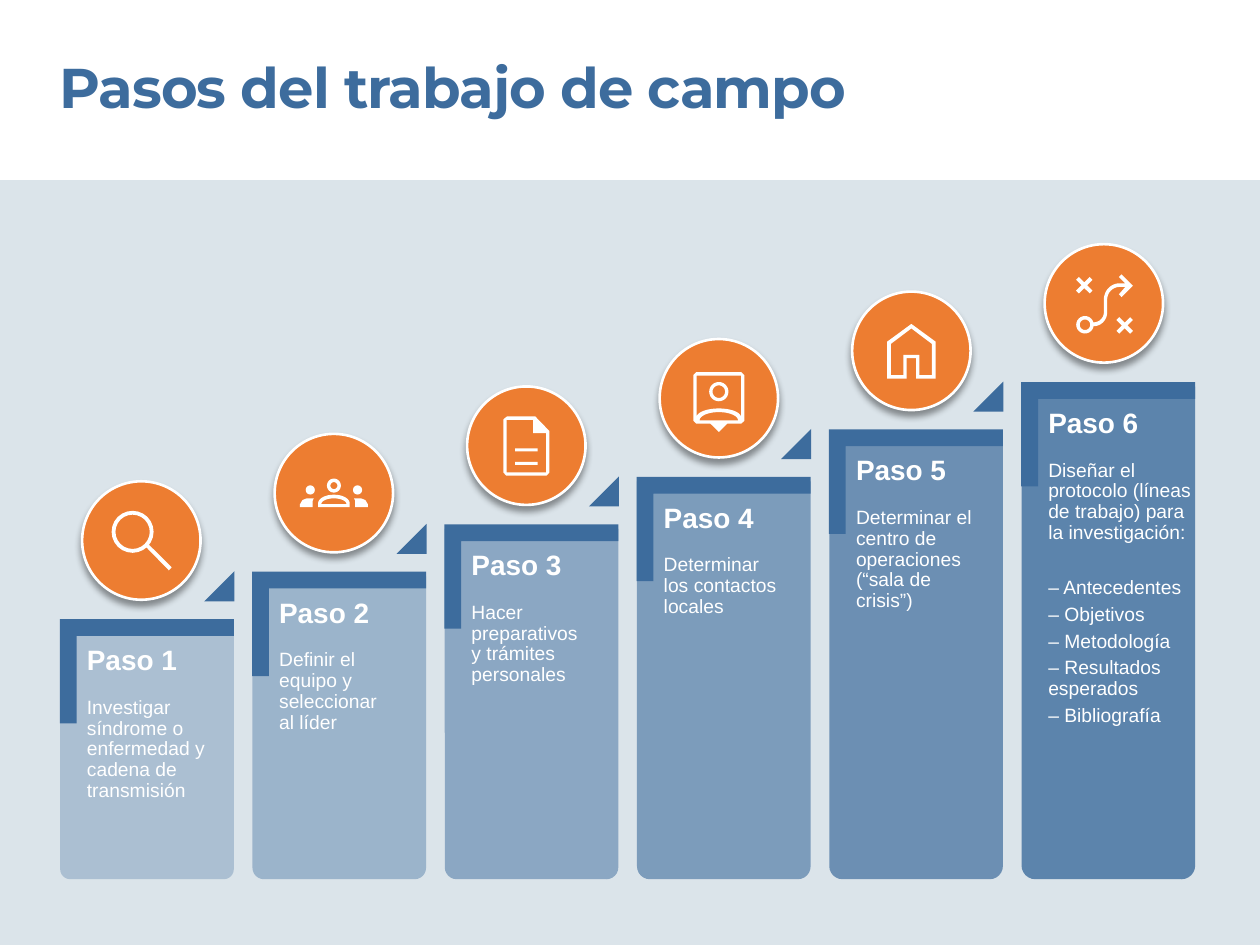
"""Build the slide with the six rising steps of field work."""
import math

from lxml import etree
from pptx import Presentation
from pptx import util as u
from pptx.dml.color import RGBColor
from pptx.enum import shapes, text
from pptx.oxml.ns import qn

COLORS = {"blue": "3D6C9D", "panel": "DBE4EA", "orange": "ED7D31", "white": "FFFFFF", "shadow": "000000"}
PITCH, RISE = 109.87, 27.1
BAR_BOTTOM = 502.4
CIRCLE = 67.7

STEPS = [
    ("Investigar síndrome o enfermedad y cadena de transmisión", 90, 0.058, 30),
    ("Definir el equipo y seleccionar al líder", 75, 0.066, 40),
    ("Hacer preparativos y trámites personales", 75.6, 0.069, 50),
    ("Determinar los contactos locales", 75.6, 0.074, 60),
    ("Determinar el centro de operaciones (“sala de crisis”)", 78.5, 0.076, 70),
    ("Diseñar el protocolo (líneas de trabajo) para la investigación:", 90, 0.079, 80),
]
PROTOCOL = ["Antecedentes", "Objetivos", "Metodología", "Resultados esperados", "Bibliografía"]


def add_element(parent, tag, **attributes):
    return etree.SubElement(parent, qn(tag), attributes)


def paint(shape, color, alpha=None):
    shape.shadow.inherit = False
    shape.fill.solid()
    shape.fill.fore_color.rgb = RGBColor.from_string(COLORS[color])
    shape.line.fill.background()
    if alpha is not None:
        tint = shape.fill._xPr.find(".//" + qn("a:srgbClr"))
        add_element(tint, "a:alpha", val=str(alpha * 1000))


def add_block(slide, kind, box, color, adjustments=(), rotation=0, alpha=None):
    block = slide.shapes.add_shape(kind, *map(u.Pt, box))
    for index, value in enumerate(adjustments):
        block.adjustments[index] = value
    block.rotation = rotation
    paint(block, color, alpha)
    return block


def add_text_frame(slide, box, insets):
    frame = slide.shapes.add_textbox(*map(u.Pt, box)).text_frame
    frame.word_wrap = True
    frame.margin_left, frame.margin_top, frame.margin_right, frame.margin_bottom = map(u.Pt, insets)
    return frame


def write(paragraph, wording, size, color="white", font="Arial", bold=False):
    paragraph.text = wording
    paragraph.font.name = font
    paragraph.font.size = u.Pt(size)
    paragraph.font.bold = bold
    paragraph.font.color.rgb = RGBColor.from_string(COLORS[color])


def add_title(slide):
    frame = add_text_frame(slide, (33.8, 30.2, 615.6, 38.9), (0, 0, 0, 0))
    frame.auto_size = text.MSO_AUTO_SIZE.SHAPE_TO_FIT_TEXT
    title = frame.paragraphs[0]
    write(title, "Pasos del trabajo de campo", 32, "blue", "Montserrat", True)
    title.runs[0].font._element.set("spc", "-50")


def add_step_text(slide, index, wording, width):
    items = PROTOCOL if index == len(STEPS) - 1 else []
    box = (43.9 + PITCH * index, 363.6 - RISE * index, width, 78.5)
    frame = add_text_frame(slide, box, (5.76, 5.76, 0 if items else 2.88, 5.76))
    heading = frame.paragraphs[0]
    write(heading, f"Paso {index + 1}", 16, bold=True)
    for line in [wording] + [f"– {item}" for item in items]:
        paragraph = frame.add_paragraph()
        write(paragraph, line, 11)
        paragraph.space_after = u.Pt(3.5)
    heading.space_after = u.Pt(12)
    for paragraph in frame.paragraphs:
        paragraph.line_spacing = 0.9
    if items:
        frame.paragraphs[2].space_before = u.Pt(16)


def add_circle(slide, center):
    box = [value - CIRCLE / 2 for value in center] + [CIRCLE, CIRCLE]
    circle = add_block(slide, shapes.MSO_SHAPE.OVAL, box, "orange")
    circle.line.color.rgb = RGBColor.from_string(COLORS["white"])
    circle.line.width = u.Pt(1.5)
    effects = circle._element.spPr.find(qn("a:effectLst"))
    shadow = add_element(effects, "a:outerShdw", blurRad=str(u.Pt(4)), dist=str(u.Pt(3)),
                         dir="5400000", algn="t", rotWithShape="0")
    shade = add_element(shadow, "a:srgbClr", val=COLORS["shadow"])
    add_element(shade, "a:alpha", val="40000")


def arc(x, y, rx, ry, start=0, end=360, parts=24):
    angles = [math.radians(start + (end - start) * n / parts) for n in range(parts + 1)]
    return [(x + rx * math.cos(a), y + ry * math.sin(a)) for a in angles]


def disc(x, y, radius):
    return arc(x, y, radius, radius)


def rectangle(left, top, right, bottom):
    return [(left, top), (right, top), (right, bottom), (left, bottom)]


def mirror(points):
    return [(-x, y) for x, y in points]


def cross(x, y):
    arm = [(1.6, 0), (4.7, 3.1), (3.1, 4.7)]
    turns = [(1, 0), (0, 1), (-1, 0), (0, -1)]
    return [(x + c * px - s * py, y + s * px + c * py) for c, s in turns for px, py in arm]


def magnifier():
    return [disc(-5, -5, 12), disc(-5, -5, 9.8), [(2.9, 3.9), (4.4, 2.4), (17.3, 15.3), (15.7, 17)]]


def team():
    side = [(-19.4, 8), (-19.4, 6.4), (-18, 4), (-15.5, 3), (-11.5, 3), (-12.2, 4.5), (-12.2, 8)]
    body = [(-9, 8)] + arc(0, 5.8, 9, 4.9, 180, 360) + [(9, 8)]
    return [disc(0, -4.3, 4), disc(0, -4.3, 2), disc(-13.5, -1.8, 2.6), disc(13.5, -1.8, 2.6),
            side, mirror(side), body, arc(0, 6.3, 7.2, 3.3, 180, 360)]


def document():
    sheet = [(-11, -16.8), (5, -16.8), (13.2, -8.3), (13.2, 15.3), (11.5, 17.1),
             (-11.5, 17.1), (-13.2, 15.3), (-13.2, -15)]
    inside = [(-11.3, -14.8), (3.8, -14.8), (3.8, -7.2), (11.3, -7.2), (11.3, 15.2), (-11.3, 15.2)]
    return [sheet, inside, rectangle(-6.5, 1.5, 6.5, 3.3), rectangle(-6.5, 9.2, 6.5, 11)]


def contact():
    card = [(-12.8, -15), (12.8, -15), (14.6, -13.2), (14.6, 12.8), (12.8, 14.5), (4.8, 14.5),
            (0, 19.2), (-4.8, 14.5), (-12.8, 14.5), (-14.6, 12.8), (-14.6, -13.2)]
    inside = [(-12.7, -13)] + arc(0, 10.8, 12.7, 5, 180, 360) + [(12.7, -13)]
    return [card, inside, arc(0, 12.6, 11, 4.7, 180, 360), disc(0, -3.8, 5.5), disc(0, -3.8, 3.6)]


def house():
    half_wall = [(0, -15.4), (13.9, -5.2), (13.9, 15.8), (2.7, 15.8), (2.7, 4.2)]
    half_room = [(0, -12.8), (11.7, -4), (11.7, 13.8), (4.6, 13.8), (4.6, 2.3)]
    return [half + mirror(half[:0:-1]) for half in (half_wall, half_room)]


def strategy():
    arrow = [(12.2, -11.5), (8.6, -15.1), (10.1, -16.6), (16.6, -10.1), (10.1, -3.6), (8.6, -5.2), (12.2, -9.4)]
    route = (arc(-5.8, 5, 5.8, 5.8, 90, 0) + arc(9, -2.2, 9, 9.3, 180, 270) + arrow
             + arc(9, -2.2, 7.1, 7.2, 270, 180) + arc(-5.8, 5, 7.7, 8, 0, 90))
    return [disc(-10.8, 12.2, 5), disc(-10.8, 12.2, 3), route, cross(-11.2, -10.4), cross(11.9, 12.6)]


def add_icon(slide, center, contours):
    outlines = [[(u.Pt(center[0] + x), u.Pt(center[1] + y)) for x, y in contour] for contour in contours]
    builder = slide.shapes.build_freeform(*outlines[0][0])
    builder.add_line_segments(outlines[0][1:])
    for outline in outlines[1:]:
        builder.move_to(*outline[0])
        builder.add_line_segments(outline[1:])
    paint(builder.convert_to_shape(), "white")


def main():
    deck = Presentation()
    deck.slide_width, deck.slide_height = u.Pt(720), u.Pt(540)
    slide = deck.slides.add_slide(deck.slide_layouts[6])
    kinds = shapes.MSO_SHAPE
    add_block(slide, kinds.RECTANGLE, (0, 103, 720, 437), "panel")
    for index, (_, _, rounding, alpha) in enumerate(STEPS):
        top = 356.4 - RISE * index
        add_block(slide, kinds.ROUND_2_SAME_RECTANGLE, (34.4 + PITCH * index, top, 99.2, BAR_BOTTOM - top),
                  "blue", (rounding, 0), 180, alpha)
    add_title(slide)
    for index, (wording, width, _, _) in enumerate(STEPS):
        shift, lift = PITCH * index, RISE * index
        add_block(slide, kinds.CORNER, (54.1 + shift, 333.9 - lift, 59.6, 99.4), "blue", (0.161, 0.161), 90)
        add_step_text(slide, index, wording, width)
        if index < len(STEPS) - 1:
            add_block(slide, kinds.ISOSCELES_TRIANGLE, (116.7 + shift, 326.4 - lift, 17.2, 17.2), "blue", (1,))
    centers = [(80.8 + 110 * index, 308.9 - RISE * index) for index in range(len(STEPS))]
    for center in centers:
        add_circle(slide, center)
    for center, icon in zip(centers, (magnifier, team, document, contact, house, strategy)):
        add_icon(slide, center, icon())
    deck.save("out.pptx")


if __name__ == "__main__":
    main()
